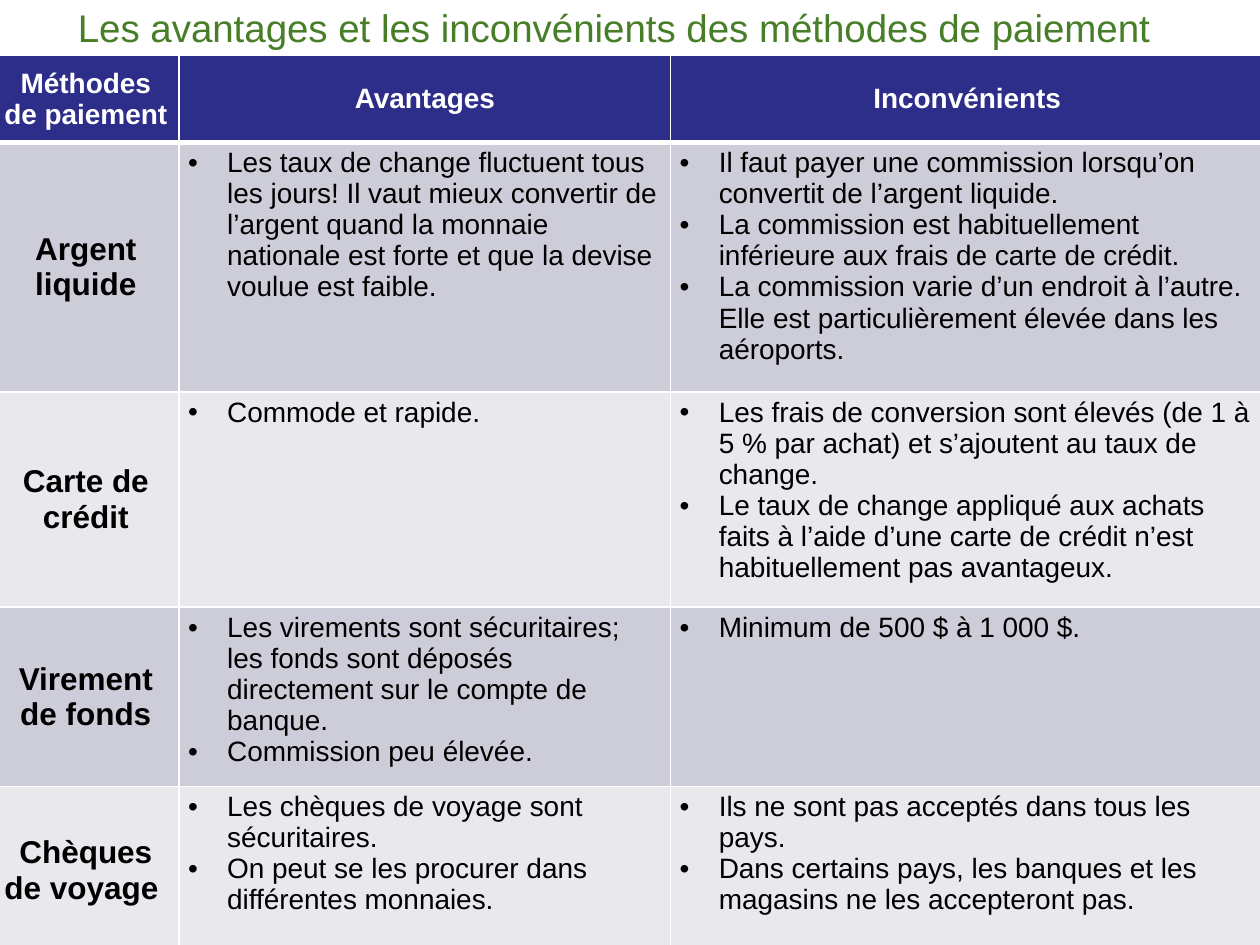
"""Builds a slide comparing the pros and cons of payment methods."""
from lxml import etree
from pptx import Presentation
from pptx import util as u
from pptx.dml.color import RGBColor
from pptx.enum import text
from pptx.oxml.ns import qn

COLOURS = {
    "title": "477E27",
    "header": "2D2D8A",
    "band_dark": "CDCDDA",
    "band_light": "E8E8ED",
    "white": "FFFFFF",
    "black": "000000",
}
FONT = "Arial"
COLUMN_WIDTHS = [3.76, 9.91, 11.96]
ROW_HEIGHTS = [1.75, 5.03, 4.34, 3.61, 3.4]
HEADINGS = ["Méthodes de paiement", "Avantages", "Inconvénients"]
METHODS = [
    ("Argent liquide",
     ["Les taux de change fluctuent tous les jours! Il vaut mieux convertir de l’argent "
      "quand la monnaie nationale est forte et que la devise voulue est faible."],
     ["Il faut payer une commission lorsqu’on convertit de l’argent liquide.",
      "La commission est habituellement inférieure aux frais de carte de crédit.",
      "La commission varie d’un endroit à l’autre. Elle est particulièrement élevée "
      "dans les aéroports."]),
    ("Carte de crédit",
     ["Commode et rapide."],
     ["Les frais de conversion sont élevés (de 1 à 5 % par achat) et s’ajoutent au "
      "taux de change.",
      "Le taux de change appliqué aux achats faits à l’aide d’une carte de crédit n’est "
      "habituellement pas avantageux."]),
    ("Virement de fonds",
     ["Les virements sont sécuritaires; les fonds sont déposés directement sur le compte "
      "de banque.",
      "Commission peu élevée."],
     ["Minimum de 500 $ à 1 000 $."]),
    ("Chèques de voyage ",
     ["Les chèques de voyage sont sécuritaires.",
      "On peut se les procurer dans différentes monnaies."],
     ["Ils ne sont pas acceptés dans tous les pays.",
      "Dans certains pays, les banques et les magasins ne les accepteront pas."]),
]


def rgb(name):
    return RGBColor.from_string(COLOURS[name])


def add_run(paragraph, wording, size, colour, bold=False):
    run = paragraph.add_run()
    run.text = wording
    run.font.name = FONT
    run.font.size = u.Pt(size)
    run.font.bold = bold
    run.font.color.rgb = rgb(colour)


def add_bullet(paragraph):
    properties = paragraph._p.get_or_add_pPr()
    indent = u.Cm(0.79)
    properties.set("marL", str(indent))
    properties.set("indent", str(-indent))
    etree.SubElement(properties, qn("a:buFont")).set("typeface", FONT)
    etree.SubElement(properties, qn("a:buChar")).set("char", "•")


def set_borders(cell, bottom):
    properties = cell._tc.get_or_add_tcPr()
    for side, width in (("L", 1), ("R", 1), ("T", 1), ("B", bottom)):
        line = etree.SubElement(properties, qn(f"a:ln{side}"), w=str(u.Pt(width)))
        fill = etree.SubElement(line, qn("a:solidFill"))
        etree.SubElement(fill, qn("a:srgbClr"), val=COLOURS["white"])


def style_cell(cell, fill, bottom=1):
    set_borders(cell, bottom)
    cell.fill.solid()
    cell.fill.fore_color.rgb = rgb(fill)
    cell.margin_left = cell.margin_right = u.Cm(0.18)
    cell.margin_top = cell.margin_bottom = u.Cm(0.1)


def fill_label(cell, wording, size, colour):
    cell.vertical_anchor = text.MSO_ANCHOR.MIDDLE
    label = cell.text_frame.paragraphs[0]
    label.alignment = text.PP_ALIGN.CENTER
    add_run(label, wording, size, colour, bold=True)


def fill_points(cell, points):
    frame = cell.text_frame
    for index, point in enumerate(points):
        paragraph = frame.add_paragraph() if index else frame.paragraphs[0]
        add_bullet(paragraph)
        add_run(paragraph, point, 16, "black")


def add_title(slide, wording):
    title = slide.shapes.add_textbox(u.Cm(1.32), u.Cm(-0.03), u.Cm(24.08), u.Cm(1.32))
    frame = title.text_frame
    frame.word_wrap = True
    frame.vertical_anchor = text.MSO_ANCHOR.MIDDLE
    frame.paragraphs[0].line_spacing = 0.8
    add_run(frame.paragraphs[0], wording, 22, "title")


def add_comparison(slide):
    table = slide.shapes.add_table(
        len(ROW_HEIGHTS), len(COLUMN_WIDTHS), u.Cm(-0.15), u.Cm(1.12),
        u.Cm(sum(COLUMN_WIDTHS)), u.Cm(sum(ROW_HEIGHTS))).table
    for column, width in zip(table.columns, COLUMN_WIDTHS):
        column.width = u.Cm(width)
    for row, height in zip(table.rows, ROW_HEIGHTS):
        row.height = u.Cm(height)
    for column, heading in enumerate(HEADINGS):
        cell = table.cell(0, column)
        style_cell(cell, "header", bottom=3)
        fill_label(cell, heading, 16, "white")
    for row, (method, *point_lists) in enumerate(METHODS, start=1):
        band = "band_dark" if row % 2 else "band_light"
        for cell in table.rows[row].cells:
            style_cell(cell, band)
        fill_label(table.cell(row, 0), method, 18, "black")
        for column, points in enumerate(point_lists, start=1):
            fill_points(table.cell(row, column), points)
    for column in range(len(HEADINGS)):
        top = table.cell(1, column)._tc.tcPr.find(qn("a:lnT"))
        top.set("w", str(u.Pt(3)))


def main():
    deck = Presentation()
    deck.slide_width, deck.slide_height = u.Cm(25.4), u.Cm(19.05)
    slide = deck.slides.add_slide(deck.slide_layouts[6])
    add_title(slide, "Les avantages et les inconvénients des méthodes de paiement")
    add_comparison(slide)
    deck.save("out.pptx")


if __name__ == "__main__":
    main()
